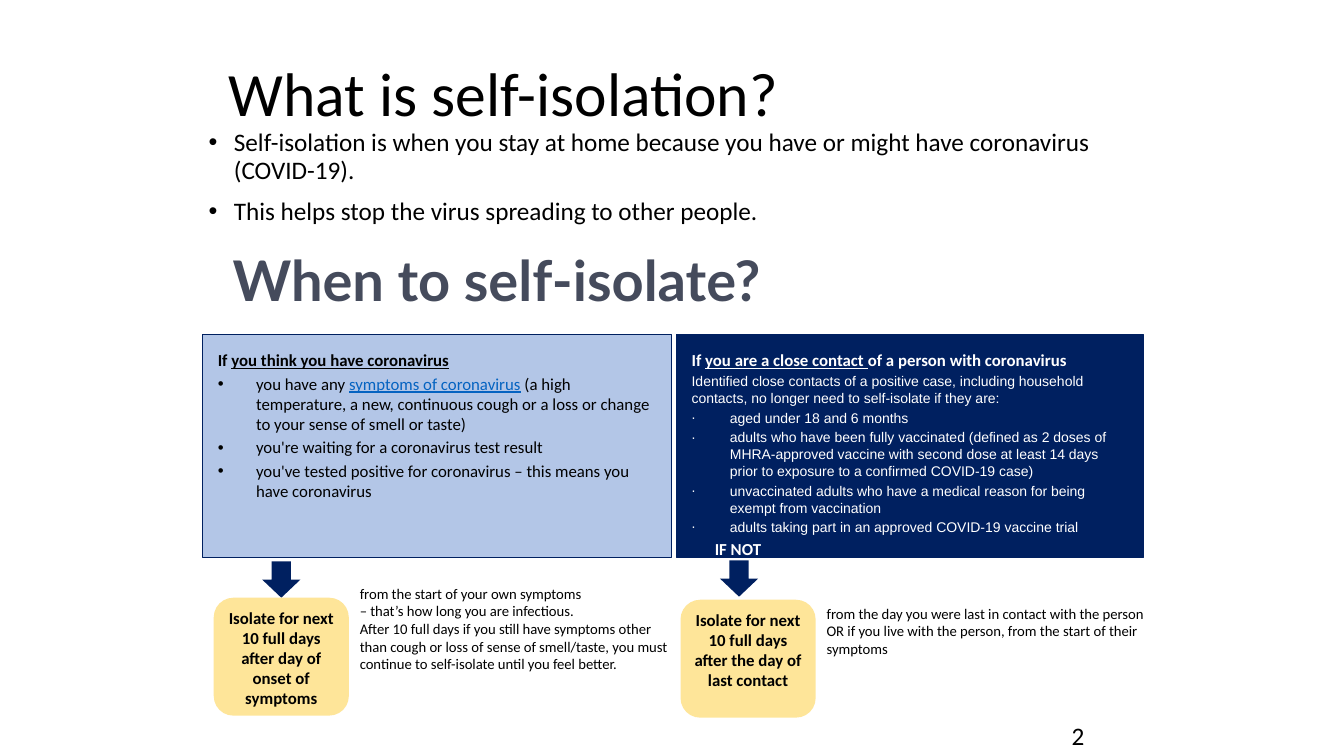
import pptx
import pptx.util
from lxml import etree
from pptx.dml.color import RGBColor
from pptx.enum.shapes import MSO_SHAPE
from pptx.enum.text import MSO_ANCHOR, MSO_AUTO_SIZE, PP_ALIGN
from pptx.oxml.ns import qn

PX = 9144  # 100 px to the inch
NAVY = RGBColor(0x00, 0x20, 0x60)
PALE_BLUE = RGBColor(0xB3, 0xC6, 0xE7)
YELLOW = RGBColor(0xFE, 0xE5, 0x99)
LINK_BLUE = RGBColor(0x05, 0x63, 0xC1)
SLATE = RGBColor(0x45, 0x4B, 0x5C)
BLACK = RGBColor(0x00, 0x00, 0x00)
WHITE = RGBColor(0xFF, 0xFF, 0xFF)

BOLD = {"bold": True}
UNDERLINED = {"bold": True, "underline": True}
LINK = {"underline": True, "color": LINK_BLUE}


def px(*lengths):
    return [n * PX for n in lengths]


def para(*runs, **fmt):
    """Describe a paragraph; a run is plain text or (text, font values)."""
    return [r if isinstance(r, tuple) else (r, {}) for r in runs], fmt


def set_indent(p, left, first, bullet, color):
    pPr = p._p.get_or_add_pPr()
    pPr.set("marL", str(left * PX))
    pPr.set("indent", str(first * PX))
    if bullet:
        clr = etree.SubElement(pPr, qn("a:buClr"))
        etree.SubElement(clr, qn("a:srgbClr"), val=str(color))
        etree.SubElement(pPr, qn("a:buFont"), typeface="Arial")
        etree.SubElement(pPr, qn("a:buChar"), char=bullet)


def fill_text(tf, paras, insets=(10, 5), anchor=MSO_ANCHOR.TOP,
              auto_size=MSO_AUTO_SIZE.NONE, **base):
    """Write paragraphs whose fonts start from the base values."""
    side, top = px(*insets)
    frame = {"word_wrap": True, "auto_size": auto_size, "vertical_anchor": anchor,
             "margin_left": side, "margin_right": side,
             "margin_top": top, "margin_bottom": top}
    for name, value in frame.items():
        setattr(tf, name, value)
    for i, (runs, fmt) in enumerate(paras):
        p = tf.add_paragraph() if i else tf.paragraphs[0]
        fmt = {**base, **fmt}
        if "indent" in fmt:
            set_indent(p, *fmt["indent"], fmt.get("bullet"), fmt["color"])
        p.alignment = fmt.get("align", PP_ALIGN.LEFT)
        p.space_before = pptx.util.Pt(fmt.get("before", 0))
        p.line_spacing = fmt.get("spacing", 1.0)
        for text, extra in runs:
            r = p.add_run()
            r.text = text
            font = {**fmt, **extra}
            r.font.color.rgb = font["color"]
            values = {"name": font.get("name", "Calibri"),
                      "size": pptx.util.Pt(font["size"]),
                      "bold": font.get("bold", False),
                      "underline": font.get("underline", False)}
            for name, value in values.items():
                setattr(r.font, name, value)


def add_shape(s, kind, box, fill, line=None):
    sp = s.shapes.add_shape(kind, *px(*box))
    sp.shadow.inherit = False
    sp.fill.solid()
    sp.fill.fore_color.rgb = fill
    if line is None:
        sp.line.fill.background()
    else:
        sp.line.color.rgb = line
        sp.line.width = pptx.util.Pt(0.75)
    return sp


def add_text(s, box, paras, **base):
    sp = s.shapes.add_textbox(*px(*box))
    fill_text(sp.text_frame, paras, **base)


def place(sp, box):
    sp.left, sp.top, sp.width, sp.height = px(*box)


def introduction(s, x, y):
    title, body = s.shapes.title, s.placeholders[1]
    place(title, (x + 20, y, 900, 87))
    fill_text(title.text_frame, [para("What is self-isolation?")],
              anchor=MSO_ANCHOR.MIDDLE, size=44, color=BLACK, spacing=0.9)
    place(body, (x, y + 72, 939, 156))
    fill_text(body.text_frame, [
        para("Self-isolation is when you stay at home because you have or "
             "might have coronavirus (COVID-19)."),
        para("This helps stop the virus spreading to other people.", before=10),
    ], size=18, color=BLACK, spacing=0.9, indent=(25, -25), bullet="•")
    add_text(s, (x + 24, y + 187, 900, 87), [para("When to self-isolate?")],
             name="Lato", size=40, bold=True, color=SLATE)


def case_column(s, box, fill, color, reasons, arrow, action, note):
    """Panel of reasons, then an arrow to the action and a note beside it."""
    x, y = box[:2]
    panel = add_shape(s, MSO_SHAPE.RECTANGLE, box, fill, NAVY)
    fill_text(panel.text_frame, reasons, insets=(15, 15), size=12, color=color)

    dx, dy = arrow
    add_shape(s, MSO_SHAPE.DOWN_ARROW, (x + dx, y + dy, 38, 36), NAVY)

    dx, dy, text = action
    sp = add_shape(s, MSO_SHAPE.ROUNDED_RECTANGLE, (x + dx, y + dy, 134, 117), YELLOW)
    fill_text(sp.text_frame, [para(text)], insets=(7, 4), size=12, bold=True,
              color=BLACK, align=PP_ALIGN.CENTER)

    dx, dy, w, h, lines = note
    add_text(s, (x + dx, y + dy, w, h), [para(line) for line in lines],
             auto_size=MSO_AUTO_SIZE.SHAPE_TO_FIT_TEXT, size=10.5, color=BLACK)


def symptoms_column(s, box):
    item = {"indent": (38, -38), "bullet": "•", "before": 2.4}
    case_column(s, box, PALE_BLUE, BLACK, [
        para(("If ", BOLD), ("you think you have coronavirus", UNDERLINED)),
        para("you have any ", ("symptoms of coronavirus", LINK),
             " (a high temperature, a new, continuous cough or a loss or "
             "change to your sense of smell or taste)", **item),
        para("you're waiting for a coronavirus test result", **item),
        para("you've tested positive for coronavirus – this means you have "
             "coronavirus", **item),
    ], (59, 225),
        (11, 261, "Isolate for next 10 full days after day of onset of symptoms"),
        (146, 243, 330, 99, [
            "from the start of your own symptoms",
            "– that’s how long you are infectious.",
            "After 10 full days if you still have symptoms other than cough or "
            "loss of sense of smell/taste, you must continue to self-isolate "
            "until you feel better."]))


def contact_column(s, box):
    small = {"name": "Arial", "size": 10, "before": 2}
    exempt = ["aged under 18 and 6 months",
              "adults who have been fully vaccinated (defined as 2 doses of "
              "MHRA-approved vaccine with second dose at least 14 days prior to "
              "exposure to a confirmed COVID-19 case)",
              "unvaccinated adults who have a medical reason for being exempt "
              "from vaccination",
              "adults taking part in an approved COVID-19 vaccine trial"]
    case_column(s, box, NAVY, WHITE, [
        para(("If ", BOLD), ("you are a close contact ", UNDERLINED),
             ("of a person with coronavirus", BOLD)),
        para("Identified close contacts of a positive case, including household "
             "contacts, no longer need to self-isolate if they are:", **small),
        *[para(text, indent=(38, -38), bullet="∙", **small) for text in exempt],
        para(("IF NOT", BOLD), indent=(23, 0), before=2.4),
    ], (43, 224),
        (4, 263, "Isolate for next 10 full days after the day of last contact"),
        (139, 263, 344, 63, [
            "from the day you were last in contact with the person OR if you "
            "live with the person, from the start of their symptoms"]))


def main():
    prs = pptx.Presentation()
    prs.slide_width, prs.slide_height = px(1333, 750)
    s = prs.slides.add_slide(prs.slide_layouts[1])
    introduction(s, 197, 52)
    symptoms_column(s, (201, 332, 465, 221))
    contact_column(s, (671, 332, 463, 221))
    add_text(s, (1053, 710, 114, 40), [para("2")], size=18, color=BLACK,
             auto_size=MSO_AUTO_SIZE.SHAPE_TO_FIT_TEXT)
    prs.save("out.pptx")


if __name__ == "__main__":
    main()
